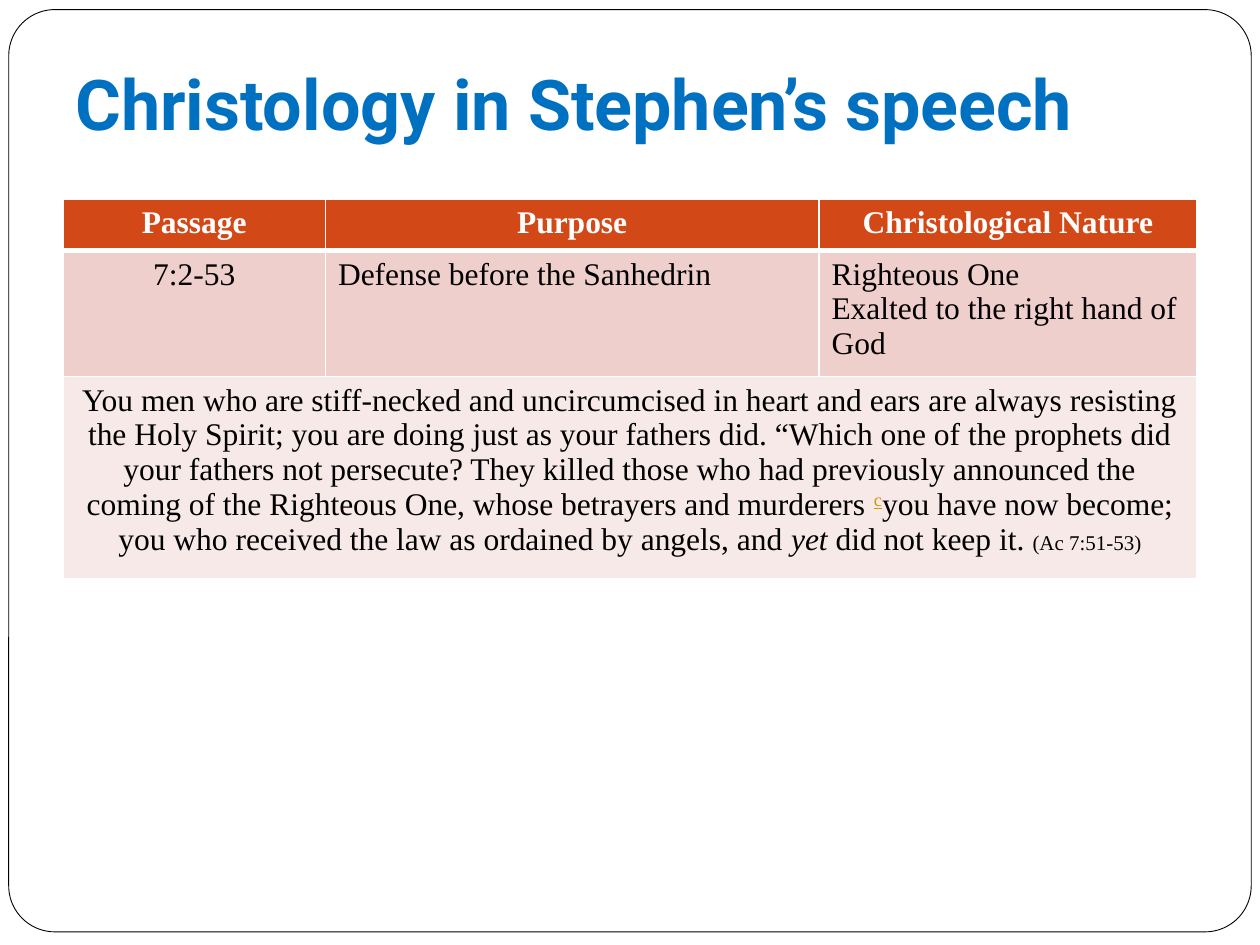
"""Build the slide on Christology in Stephen's speech."""
from lxml.etree import fromstring
from pptx import Presentation
from pptx.dml.color import RGBColor
from pptx.enum.shapes import MSO_SHAPE
from pptx.enum.text import MSO_ANCHOR, PP_ALIGN
from pptx.util import Pt

TITLE = "Christology in Stephen’s speech"
HEAD = ["Passage", "Purpose", "Christological Nature"]
BODY = ["7:2-53", "Defense before the Sanhedrin",
        "Righteous One\nExalted to the right hand of God"]
QUOTE = [
    ("You men who are stiff-necked and uncircumcised in heart and ears are "
     "always resisting the Holy Spirit; you are doing just as your fathers "
     "did. “Which one of the prophets did your fathers not persecute? They "
     "killed those who had previously announced the coming of the Righteous "
     "One, whose betrayers and murderers ", ""),
    ("c", "note"),
    ("you have now become; you who received the law as ordained by angels, "
     "and ", ""),
    ("yet ", "italic"),
    ("did not keep it. ", ""),
    ("(Ac 7:51-53)", "small"),
]
WIDTHS = [150, 282, 216]
ROW = 29.2
FILLS = ["D34817", "EFCFCC", "F7E9E8"]
EDGES = [(1, 3), (3, 1), (1, 1)]
SPACE = "http://schemas.openxmlformats.org/drawingml/2006/main"


def color(code):
    return RGBColor.from_string(code)


def paint(cell, row):
    cell.fill.solid()
    cell.fill.fore_color.rgb = color(FILLS[row])
    top, base = EDGES[row]
    props = cell._tc.get_or_add_tcPr()
    for spot, (side, width) in enumerate(zip("LRTB", (1, 1, top, base))):
        props.insert(spot, fromstring(
            f'<a:ln{side} xmlns:a="{SPACE}" w="{Pt(width)}"><a:solidFill>'
            f'<a:srgbClr val="FFFFFF"/></a:solidFill></a:ln{side}>'))


def style(frame, size, face, code, bold=False, align=PP_ALIGN.LEFT):
    for para in frame.paragraphs:
        para.alignment = align
        font = para.font
        font.size, font.name, font.bold = Pt(size), face, bold
        font.color.rgb = color(code)


def add_frame(slide):
    box = slide.shapes.add_shape(
        MSO_SHAPE.ROUNDED_RECTANGLE, Pt(5), Pt(5.5), Pt(710), Pt(527))
    box.adjustments[0] = 0.05
    box.shadow.inherit = False
    box.fill.solid()
    box.fill.fore_color.rgb = color("FFFFFF")
    box.line.color.rgb = color("000000")
    box.line.width = Pt(0.5)


def add_title(slide):
    frame = slide.shapes.add_textbox(
        Pt(36), Pt(21.6), Pt(648), Pt(68.4)).text_frame
    frame.word_wrap = True
    frame.vertical_anchor = MSO_ANCHOR.BOTTOM
    frame.margin_bottom = Pt(7.2)
    frame.text = TITLE
    style(frame, 40, "Roboto", "0070C0", bold=True)


def add_quote(para):
    for text, kind in QUOTE:
        run = para.add_run()
        run.text = text
        if kind == "note":
            run.font.underline = True
            run.font.color.rgb = color("CC9900")
            run._r.get_or_add_rPr().set("baseline", "30000")
        elif kind == "italic":
            run.font.italic = True
        elif kind == "small":
            run.font.size = Pt(12)


def add_grid(slide):
    table = slide.shapes.add_table(
        3, 3, Pt(36), Pt(114), Pt(sum(WIDTHS)), Pt(3 * ROW)).table
    for column, width in zip(table.columns, WIDTHS):
        column.width = Pt(width)
    table.cell(2, 0).merge(table.cell(2, 2))
    for row, texts in enumerate([HEAD, BODY, [""] * 3]):
        table.rows[row].height = Pt(ROW)
        for col, text in enumerate(texts):
            cell = table.cell(row, col)
            cell.text = text
            paint(cell, row)
            align = PP_ALIGN.LEFT if row == 1 and col else PP_ALIGN.CENTER
            style(cell.text_frame, 18, "Times New Roman",
                  "000000" if row else "FFFFFF", row == 0, align)
    add_quote(table.cell(2, 0).text_frame.paragraphs[0])


def main():
    deck = Presentation()
    deck.slide_width, deck.slide_height = Pt(720), Pt(540)
    slide = deck.slides.add_slide(deck.slide_layouts[6])
    add_frame(slide)
    add_title(slide)
    add_grid(slide)
    deck.save("out.pptx")


if __name__ == "__main__":
    main()
